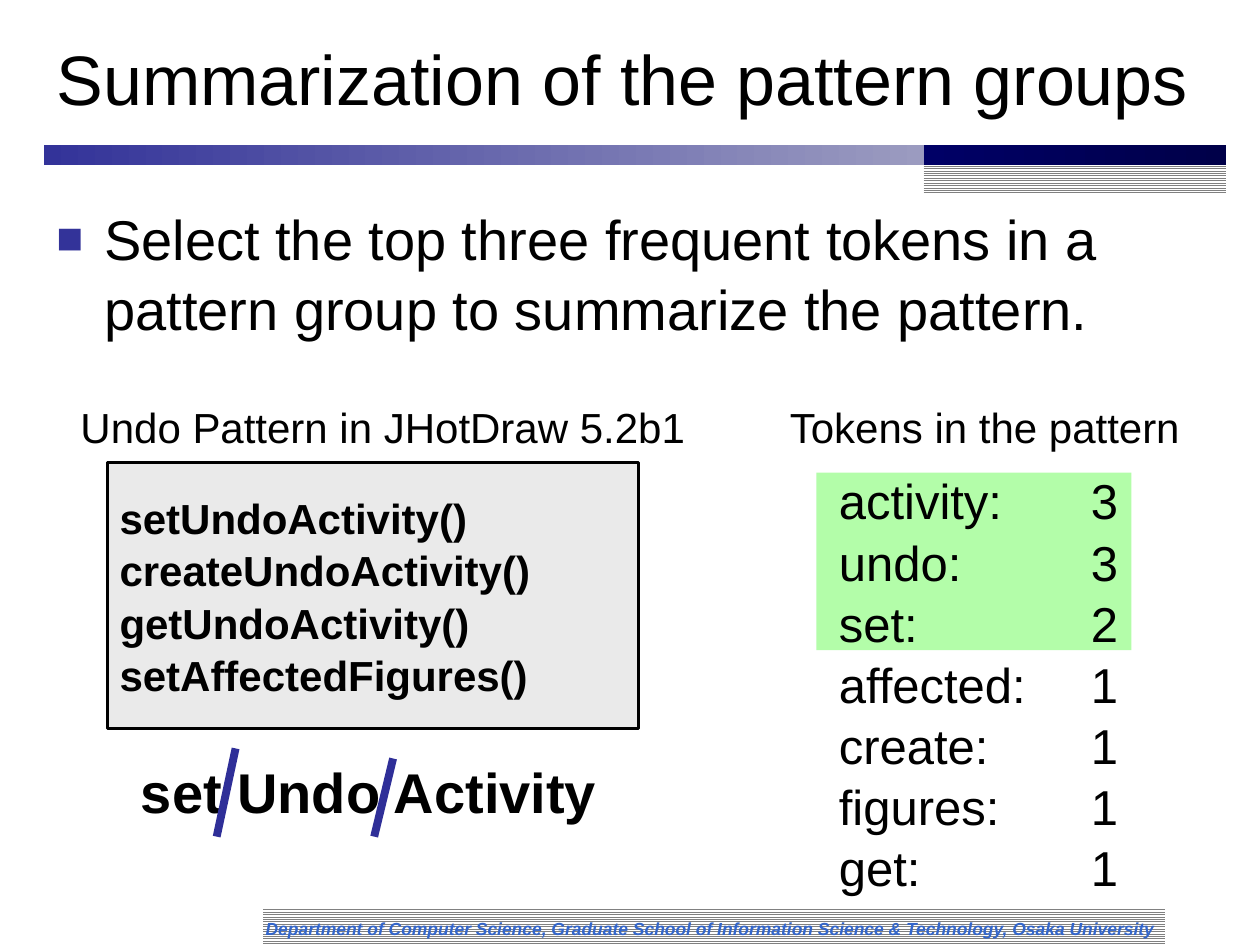
"""Build the slide on summarizing pattern groups by their frequent tokens."""
from lxml import etree
from pptx import Presentation
from pptx.dml.color import RGBColor
from pptx.enum.dml import MSO_PATTERN
from pptx.enum.shapes import MSO_CONNECTOR, MSO_SHAPE
from pptx.enum.text import MSO_ANCHOR, PP_ALIGN
from pptx.oxml.ns import qn
from pptx.util import Inches, Pt

TITLE = "Summarization of the pattern groups"
BULLET = "Select the top three frequent tokens in a pattern group to summarize the pattern."
FOOTER = ("Department of Computer Science, Graduate School of Information Science "
          "& Technology, Osaka University")
METHODS = ["setUndoActivity()", "createUndoActivity()", "getUndoActivity()", "setAffectedFigures()"]
TOKENS = [("activity", 3), ("undo", 3), ("set", 2), ("affected", 1),
          ("create", 1), ("figures", 1), ("get", 1)]
LABELS = [("Undo Pattern in JHotDraw 5.2b1", (0.54, 3.12, 5.05, 0.5)),
          ("Tokens in the pattern", (6.17, 3.12, 3.33, 0.5))]
SPLITS = [((1.72, 6.64), (1.87, 5.94)), ((2.97, 6.64), (3.12, 6.02))]
STRIPES = [(2.09, 7.2, 7.16, 0.3), (7.33, 1.24, 2.4, 0.3)]
BARS = [((0.35, 1.15, 6.98, 0.16), ("bar", "bar_end")),
        ((7.33, 1.15, 2.4, 0.16), ("navy", "navy_end"))]
COLORS = {"text": "000000", "white": "FFFFFF", "stripe": "808080", "bar": "333399",
          "bar_end": "9B9BC0", "navy": "000066", "navy_end": "000049", "footer": "3366CC",
          "highlight": "B3FDA9", "code": "EAEAEA", "split": "2F2F98"}


def color(name):
    return RGBColor.from_string(COLORS[name])


def add_rectangle(slide, box, fill=None):
    shape = slide.shapes.add_shape(MSO_SHAPE.RECTANGLE, *map(Inches, box))
    shape.shadow.inherit = False
    shape.line.fill.background()
    if fill:
        shape.fill.solid()
        shape.fill.fore_color.rgb = color(fill)
    return shape


def add_stripes(slide, box):
    fill = add_rectangle(slide, box).fill
    fill.patterned()
    fill.pattern = MSO_PATTERN.LIGHT_HORIZONTAL
    fill.fore_color.rgb = color("stripe")
    fill.back_color.rgb = color("white")


def add_gradient(slide, box, names):
    fill = add_rectangle(slide, box).fill
    fill.gradient()
    fill.gradient_angle = 0
    for stop, name in zip(fill.gradient_stops, names):
        stop.color.rgb = color(name)


def add_bullet(properties):
    properties.set("marL", str(Inches(0.38)))
    properties.set("indent", str(-Inches(0.38)))
    bullet_color = etree.SubElement(properties, qn("a:buClr"))
    etree.SubElement(bullet_color, qn("a:srgbClr"), val=COLORS["bar"])
    etree.SubElement(properties, qn("a:buSzPct"), val="80000")
    etree.SubElement(properties, qn("a:buFont"), typeface="Arial")
    etree.SubElement(properties, qn("a:buChar"), char="■")


def add_tab(properties, position):
    tabs = etree.SubElement(properties, qn("a:tabLst"))
    etree.SubElement(tabs, qn("a:tab"), pos=str(Inches(position)), algn="l")


def write(shape, lines, size, ink="text", bold=False, italic=False, wrap=False,
          anchor=MSO_ANCHOR.TOP, spacing=1.04, bullet=False, tab=None):
    frame = shape.text_frame
    frame.word_wrap = wrap
    frame.vertical_anchor = anchor
    frame.text = "\n".join(lines)
    for paragraph in frame.paragraphs:
        paragraph.alignment = PP_ALIGN.LEFT
        paragraph.line_spacing = spacing
        properties = paragraph._p.get_or_add_pPr()
        if bullet:
            add_bullet(properties)
        if tab:
            add_tab(properties, tab)
        font = paragraph.font
        font.name, font.size = "Arial", Pt(size)
        font.bold, font.italic = bold, italic
        font.color.rgb = color(ink)


def add_text(slide, box, lines, size, **style):
    write(slide.shapes.add_textbox(*map(Inches, box)), lines, size, **style)


def add_split(slide, start, end):
    line = slide.shapes.add_connector(MSO_CONNECTOR.STRAIGHT, *map(Inches, start + end))
    line.line.color.rgb = color("split")
    line.line.width = Pt(4.5)
    etree.SubElement(line._element.spPr, qn("a:effectLst"))


def main():
    presentation = Presentation()
    presentation.slide_width, presentation.slide_height = Inches(10), Inches(7.5)
    slide = presentation.slides.add_slide(presentation.slide_layouts[6])

    for box in STRIPES:
        add_stripes(slide, box)
    for box, names in BARS:
        add_gradient(slide, box, names)
    add_text(slide, (2.01, 7.23, 7.32, 0.27), [FOOTER], 10, ink="footer",
             bold=True, italic=True, anchor=MSO_ANCHOR.MIDDLE)
    add_rectangle(slide, (6.48, 3.75, 2.5, 1.41), "highlight")
    add_text(slide, (0.35, 0.13, 9.38, 0.95), [TITLE], 40, wrap=True, anchor=MSO_ANCHOR.MIDDLE)
    add_text(slide, (0.35, 1.55, 9.37, 5.28), [BULLET], 32, wrap=True, bullet=True)

    code = add_rectangle(slide, (0.85, 3.67, 4.22, 2.11), "code")
    code.line.color.rgb = color("text")
    code.line.width = Pt(1.75)
    write(code, METHODS, 24, bold=True, anchor=MSO_ANCHOR.MIDDLE)

    for label, box in LABELS:
        add_text(slide, box, [label], 24)
    add_text(slide, (6.56, 3.67, 2.44, 3.4),
             [f"{token}:\t{count}" for token, count in TOKENS], 28, tab=2)
    add_text(slide, (1.02, 5.94, 3.97, 0.64), ["set Undo Activity"], 32, bold=True)
    for start, end in SPLITS:
        add_split(slide, start, end)
    presentation.save("out.pptx")


if __name__ == "__main__":
    main()
